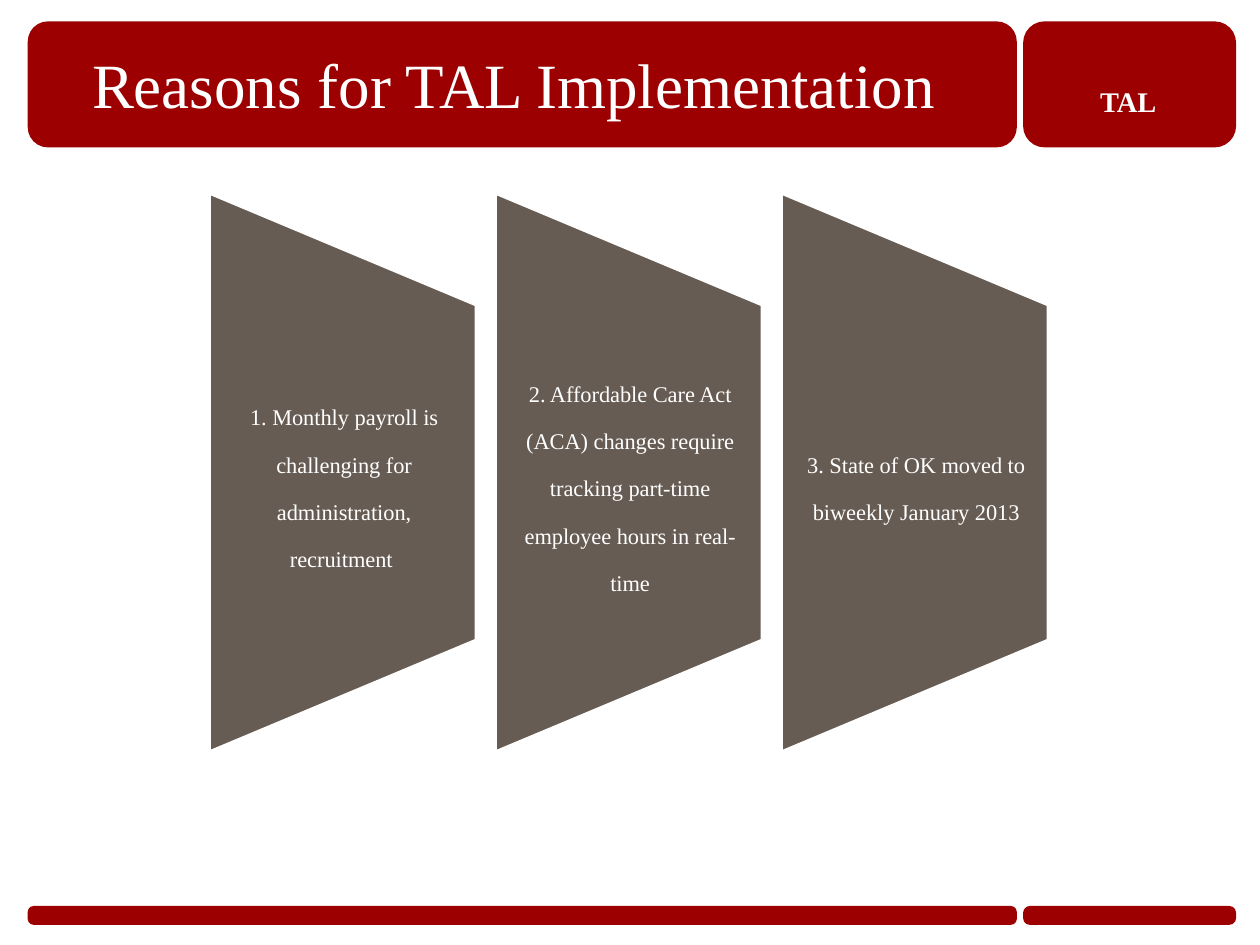
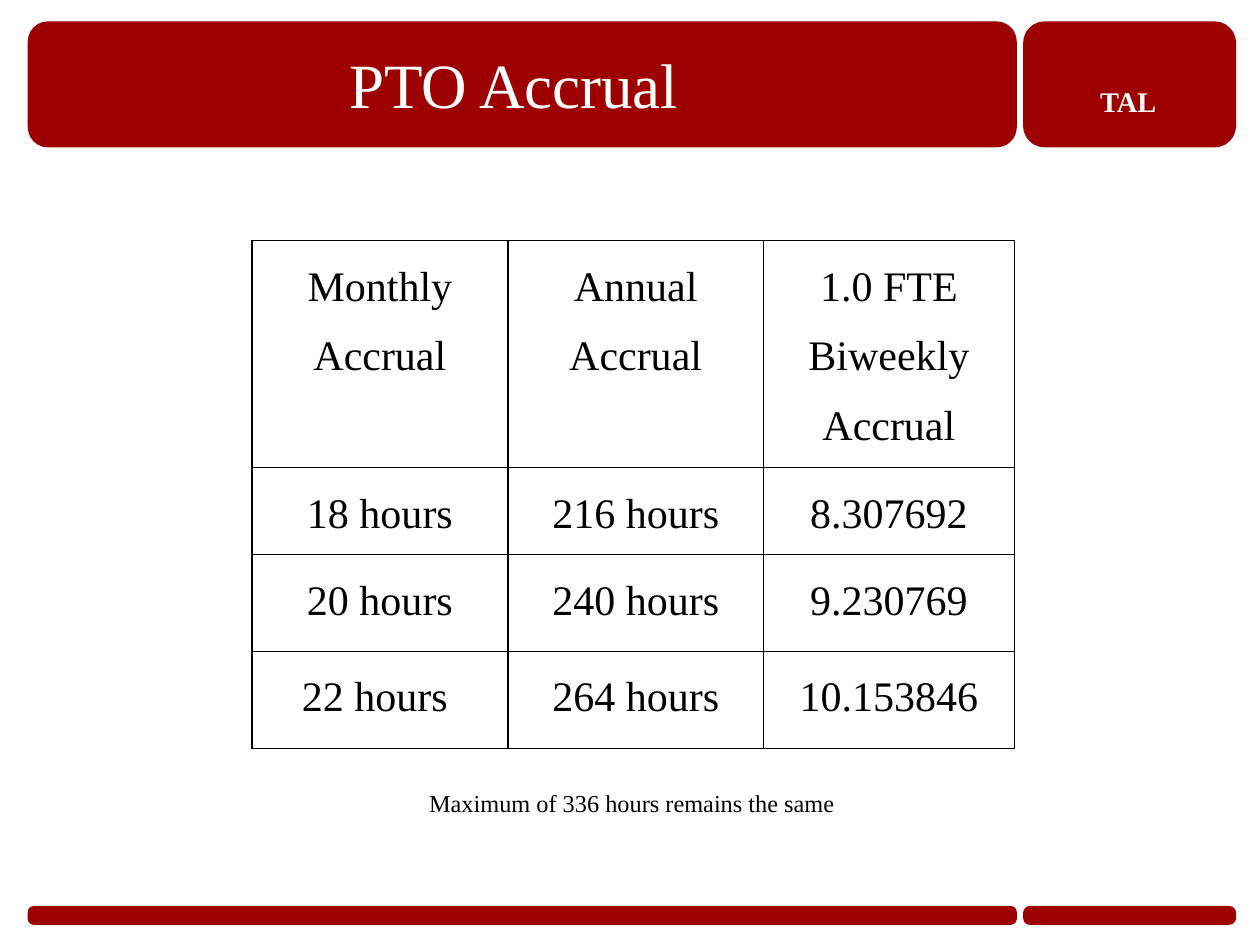
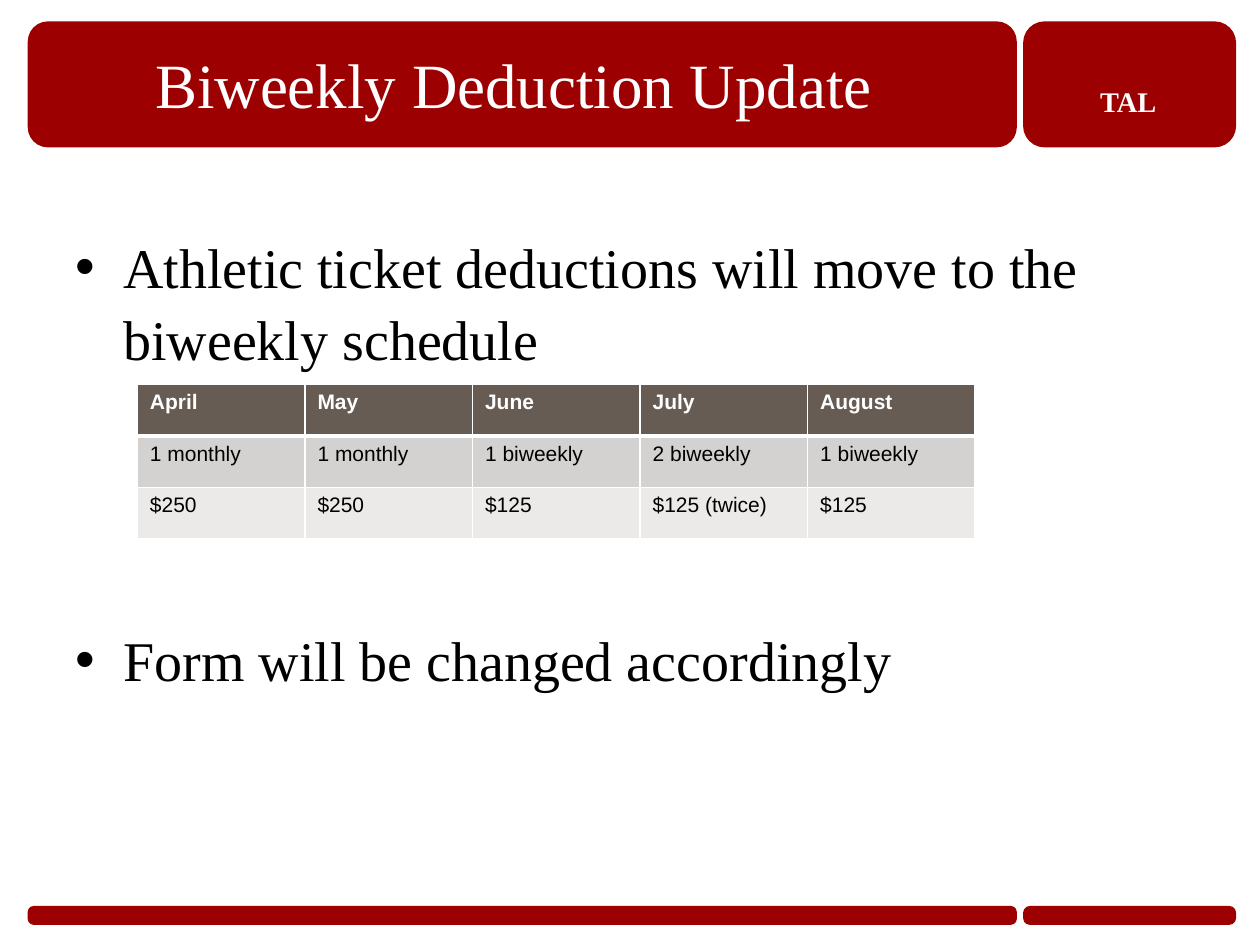
from dataclasses import dataclass

from lxml import etree
from pptx import Presentation
from pptx.dml.color import RGBColor
from pptx.enum.shapes import MSO_SHAPE
from pptx.enum.text import MSO_ANCHOR, PP_ALIGN
from pptx.oxml.ns import qn
from pptx.util import Inches, Pt

ROUNDED = MSO_SHAPE.ROUNDED_RECTANGLE
MANUAL_OPERATION = MSO_SHAPE.FLOWCHART_MANUAL_OPERATION
MIDDLE, TOP = MSO_ANCHOR.MIDDLE, MSO_ANCHOR.TOP
CENTER, LEFT = PP_ALIGN.CENTER, PP_ALIGN.LEFT

CRIMSON = RGBColor(0x9C, 0x00, 0x00)
TAUPE = RGBColor(0x67, 0x5C, 0x53)
LIGHT_GRAY = RGBColor(0xD3, 0xD2, 0xD1)
PALE_GRAY = RGBColor(0xEB, 0xEA, 0xE9)
WHITE = RGBColor(0xFF, 0xFF, 0xFF)
BLACK = RGBColor(0x00, 0x00, 0x00)

SERIF = "Times New Roman"
SANS = "Arial"
SUBSCRIPT = "-25000"
BORDER_SIDES = ("L", "R", "T", "B")


@dataclass(frozen=True)
class Box:
    left: float
    top: float
    width: float
    height: float

    def inches(self) -> tuple:
        return tuple(Inches(n) for n in (self.left, self.top, self.width, self.height))


@dataclass(frozen=True)
class Band:
    box: Box
    corner: float


@dataclass(frozen=True)
class TextStyle:
    size: float
    color: RGBColor = BLACK
    font: str = SERIF
    bold: bool = False
    align: PP_ALIGN = CENTER
    lowered: bool = False


@dataclass(frozen=True)
class RowStyle:
    height: float
    text: TextStyle
    fill: RGBColor | None = None
    bottom_border: float = 1


BANDS = [
    Band(Box(8.12, 7.19, 1.69, 0.15), 0.35),
    Band(Box(0.22, 7.19, 7.85, 0.15), 0.31),
    Band(Box(8.12, 0.17, 1.69, 1), 0.17),
    Band(Box(0.22, 0.17, 7.85, 1), 0.16),
]
TITLE_BOX = Box(0.23, 0.18, 7.82, 0.97)
TAG_BOX = Box(8.28, 0.18, 1.35, 0.99)
TITLE = TextStyle(36, WHITE)
TAG = TextStyle(28, WHITE, bold=True, lowered=True)
REASON = TextStyle(22, WHITE, lowered=True)
NOTE = TextStyle(24, lowered=True)
BULLET = TextStyle(32, align=LEFT)
ACCRUAL = TextStyle(24)
MONTH = TextStyle(12, WHITE, SANS, True, LEFT)
DEDUCTION = TextStyle(12, BLACK, SANS, align=LEFT)

REASONS = [
    "1. Monthly payroll is challenging for administration, recruitment ",
    "2. Affordable Care Act (ACA) changes require tracking part-time employee hours in real-time",
    "3. State of OK moved to biweekly January 2013",
]
REASON_STEP = 2.27

ACCRUAL_ROWS = [
    ["Monthly Accrual", "Annual Accrual", "1.0 FTE Biweekly Accrual"],
    ["18 hours", "216 hours", "8.307692"],
    ["20 hours", "240 hours", "9.230769"],
    ["22 hours ", "264 hours", "10.153846"],
]
ACCRUAL_STYLES = [RowStyle(height, ACCRUAL) for height in (1.66, 0.69, 0.77, 0.77)]

DEDUCTION_ROWS = [
    ["April", "May", "June", "July", "August"],
    ["1 monthly", "1 monthly", "1 biweekly", "2 biweekly", "1 biweekly"],
    ["$250", "$250", "$125", "$125 (twice)", "$125"],
]
DEDUCTION_STYLES = [
    RowStyle(0.41, MONTH, TAUPE, 3),
    RowStyle(0.41, DEDUCTION, LIGHT_GRAY),
    RowStyle(0.41, DEDUCTION, PALE_GRAY),
]


def write(paragraph, text: str, style: TextStyle) -> None:
    run = paragraph.add_run()
    run.text = text
    paragraph.alignment = style.align
    font = paragraph.font
    font.name, font.size, font.bold = style.font, Pt(style.size), style.bold
    font.color.rgb = style.color
    if style.lowered:
        run.font._element.set("baseline", SUBSCRIPT)


def add_text(slide, box: Box, text: str, style: TextStyle, anchor=MIDDLE):
    frame = slide.shapes.add_textbox(*box.inches()).text_frame
    frame.word_wrap = True
    frame.vertical_anchor = anchor
    write(frame.paragraphs[0], text, style)
    return frame


def add_filled_shape(slide, kind, box: Box, color: RGBColor):
    shape = slide.shapes.add_shape(kind, *box.inches())
    shape.shadow.inherit = False
    shape.fill.solid()
    shape.fill.fore_color.rgb = color
    shape.line.fill.background()
    return shape


def add_titled_slide(presentation, title: str):
    slide = presentation.slides.add_slide(presentation.slide_layouts[6])
    for band in BANDS:
        shape = add_filled_shape(slide, ROUNDED, band.box, CRIMSON)
        shape.adjustments[0] = band.corner
    add_text(slide, TAG_BOX, "TAL", TAG)
    add_text(slide, TITLE_BOX, title, TITLE)
    return slide


def set_border(cell, side: str, color: RGBColor, width: float) -> None:
    line = etree.SubElement(cell._tc.get_or_add_tcPr(), qn(f"a:ln{side}"), w=str(Pt(width)))
    fill = etree.SubElement(line, qn("a:solidFill"))
    etree.SubElement(fill, qn("a:srgbClr"), val=str(color))


def add_grid(slide, box: Box, widths: list[float], rows: list[list[str]],
             styles: list[RowStyle], border: RGBColor):
    table = slide.shapes.add_table(len(rows), len(widths), *box.inches()).table
    table.first_row = table.horz_banding = False
    for column, width in zip(table.columns, widths):
        column.width = Inches(width)
    top_border = 1
    for row, texts, style in zip(table.rows, rows, styles):
        row.height = Inches(style.height)
        for cell, text in zip(row.cells, texts):
            for side in BORDER_SIDES:
                thickness = {"T": top_border, "B": style.bottom_border}.get(side, 1)
                set_border(cell, side, border, thickness)
            if style.fill is None:
                cell.fill.background()
            else:
                cell.fill.solid()
                cell.fill.fore_color.rgb = style.fill
            write(cell.text_frame.paragraphs[0], text, style.text)
        top_border = style.bottom_border
    return table


def add_bullet(paragraph, text: str) -> None:
    properties = paragraph._p.get_or_add_pPr()
    properties.set("marL", str(Inches(0.38)))
    properties.set("indent", str(Inches(-0.38)))
    etree.SubElement(properties, qn("a:buFont"), typeface=SANS)
    etree.SubElement(properties, qn("a:buChar"), char="•")
    paragraph.line_spacing = 1.08
    write(paragraph, text, BULLET)


def build_reasons(presentation) -> None:
    slide = add_titled_slide(presentation, "Reasons for TAL Implementation ")
    for index, reason in enumerate(REASONS):
        offset = index * REASON_STEP
        panel = add_filled_shape(slide, MANUAL_OPERATION, Box(0.5 + offset, 2.69, 4.44, 2.12), TAUPE)
        panel.rotation = 270
        panel.line.color.rgb = WHITE
        panel.line.width = Pt(2)
        frame = add_text(slide, Box(1.67 + offset, 2.42, 2.12, 2.67), reason, REASON)
        frame.margin_left = frame.margin_right = Inches(0.15)
        frame.margin_top = frame.margin_bottom = 0
        frame.paragraphs[0].line_spacing = 0.9
        frame.paragraphs[0].space_after = Pt(8)


def build_accrual(presentation) -> None:
    slide = add_titled_slide(presentation, "PTO Accrual ")
    table = add_grid(slide, Box(2, 1.91, 6.05, 3.89), [2.03, 2.03, 1.99],
                     ACCRUAL_ROWS, ACCRUAL_STYLES, BLACK)
    for cell in table.iter_cells():
        cell.margin_left = cell.margin_right = Inches(0.07)
        cell.margin_top = cell.margin_bottom = 0
        cell.text_frame.paragraphs[0].line_spacing = 1.5
    add_text(slide, Box(2.03, 5.98, 6.02, 0.5), "Maximum of 336 hours remains the same ", NOTE, TOP)


def build_deductions(presentation) -> None:
    slide = add_titled_slide(presentation, "Biweekly Deduction Update ")
    frame = slide.shapes.add_textbox(*Box(0.5, 1.75, 9, 4.95).inches()).text_frame
    frame.word_wrap = True
    add_bullet(frame.paragraphs[0], "Athletic ticket deductions will move to the biweekly schedule")
    closing = frame.add_paragraph()
    add_bullet(closing, "Form will be changed accordingly")
    closing.space_before = Pt(142)
    add_grid(slide, Box(1.09, 3.05, 6.65, 1.23), [1.33] * 5,
             DEDUCTION_ROWS, DEDUCTION_STYLES, WHITE)


def main() -> None:
    presentation = Presentation()
    presentation.slide_width = Inches(10)
    presentation.slide_height = Inches(7.5)
    build_reasons(presentation)
    build_accrual(presentation)
    build_deductions(presentation)
    presentation.save("out.pptx")


if __name__ == "__main__":
    main()
